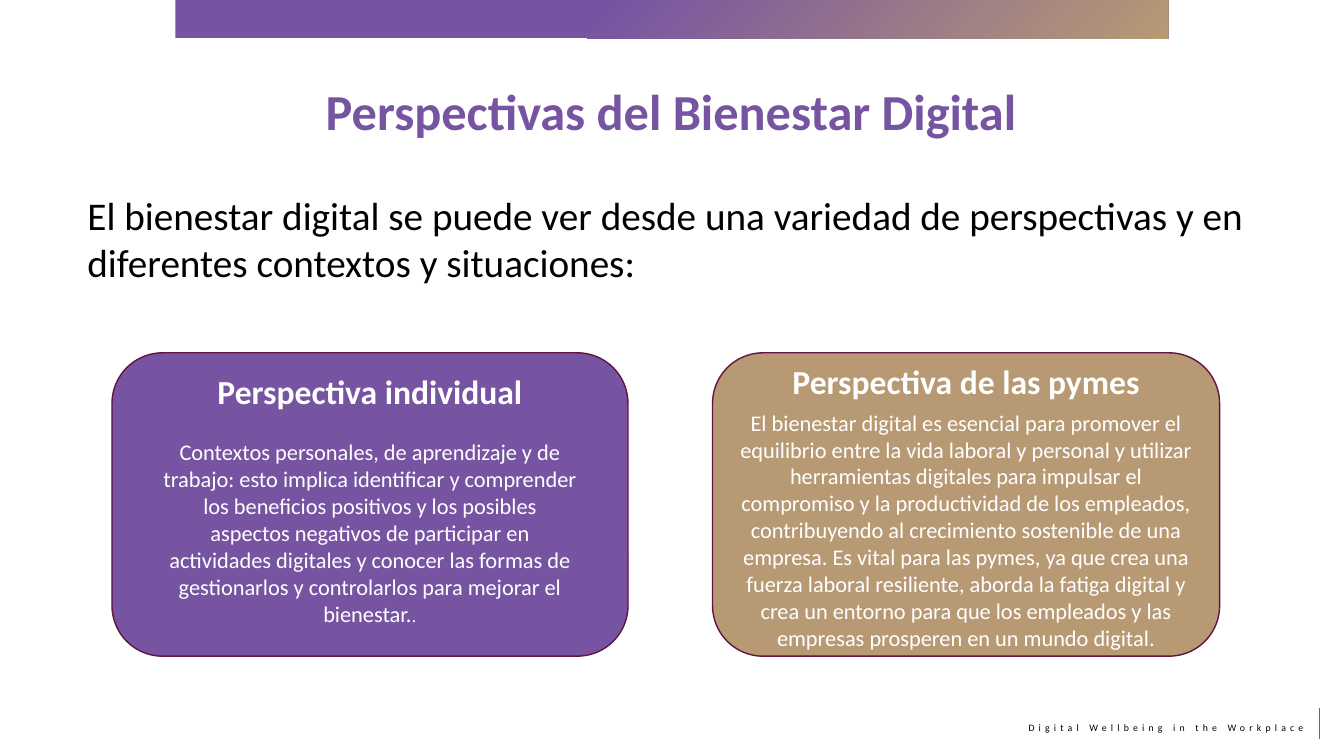
import pptx
import pptx.dml.color
import pptx.enum.shapes
import pptx.enum.text
import pptx.util
from dataclasses import dataclass
from lxml import etree
from pptx.oxml import parse_xml
from pptx.oxml.ns import nsdecls, qn

Pt = pptx.util.Pt
Align = pptx.enum.text.PP_ALIGN
Preset = pptx.enum.shapes.MSO_SHAPE


@dataclass(frozen=True)
class Theme:
    purple: str = "7654A2"
    tan: str = "B79974"
    outline: str = "631440"
    black: str = "000000"
    white: str = "FFFFFF"
    font: str = "Calibri"
    serif: str = "TeX Gyre Schola"
    title: float = 36
    intro: float = 28
    heading: float = 24
    body: float = 16
    stop: float = 12.8
    footer: float = 7


THEME = Theme()


def rgb(value):
    return pptx.dml.color.RGBColor.from_string(value)


def add_text_box(page, box):
    frame = page.shapes.add_textbox(*map(Pt, box)).text_frame
    frame.word_wrap = True
    return frame


def add_span(para, text, size, color, bold=False, font=THEME.font):
    span = para.add_run()
    span.text = text
    for name, value in {"size": Pt(size), "bold": bold, "name": font}.items():
        setattr(span.font, name, value)
    span.font.color.rgb = rgb(color)
    return span


def add_panel(page, preset, box):
    panel = page.shapes.add_shape(preset, *map(Pt, box))
    panel.shadow.inherit = False
    return panel


def add_band(page, box):
    """Top band, shaded radially from its lower right corner."""
    band = add_panel(page, Preset.RECTANGLE, box)
    band.line.fill.background()
    band.fill.background()
    properties = band.fill._xPr
    gradient = parse_xml(
        f'<a:gradFill {nsdecls("a")} rotWithShape="1"><a:gsLst>'
        f'<a:gs pos="0"><a:srgbClr val="{THEME.tan}"/></a:gs>'
        f'<a:gs pos="58000"><a:srgbClr val="{THEME.purple}"/></a:gs></a:gsLst>'
        '<a:path path="circle"><a:fillToRect l="100000" t="100000"/></a:path></a:gradFill>')
    properties.replace(properties.find(qn("a:noFill")), gradient)


def add_footer(page, box):
    left, top, width, height = box
    para = add_text_box(page, box).paragraphs[0]
    para.alignment = Align.RIGHT
    span = add_span(para, "Digital Wellbeing in the Workplace", THEME.footer, THEME.black)
    span.font._element.set("spc", "300")
    rule_x, rule_bottom = left + width + 4.3, top + height
    rule = page.shapes.add_connector(
        pptx.enum.shapes.MSO_CONNECTOR.STRAIGHT,
        *map(Pt, (rule_x, rule_bottom, rule_x, rule_bottom - 22.3)))
    rule.line.color.rgb = rgb(THEME.purple)
    rule.line.width = Pt(0.75)
    etree.SubElement(rule._element.spPr, qn("a:effectLst"))


def add_title(page, box):
    para = add_text_box(page, box).paragraphs[0]
    para.alignment = Align.CENTER
    add_span(para, "Perspectivas del Bienestar Digital", THEME.title, THEME.purple, True)


def add_intro(page, box):
    para = add_text_box(page, box).paragraphs[0]
    add_span(para, "El bienestar digital se puede ver desde una variedad de perspectivas "
             "y en diferentes contextos y situaciones:", THEME.intro, THEME.black)


def add_card(page, box, color, heading, body, offset, text_width, gap):
    """Rounded card with its text centred across it, offset from its top.

    Returns the body paragraph.
    """
    left, top, width, height = box
    card = add_panel(page, Preset.ROUNDED_RECTANGLE, box)
    card.fill.solid()
    card.fill.fore_color.rgb = rgb(color)
    card.line.color.rgb = rgb(THEME.outline)
    card.line.width = Pt(1)
    text_left = left + (width - text_width) / 2
    frame = add_text_box(page, (text_left, top + offset, text_width, height - offset))
    heading_para, body_para = frame.paragraphs[0], frame.add_paragraph()
    for para in (heading_para, body_para):
        para.alignment = Align.CENTER
    body_para.space_before = Pt(gap)
    add_span(heading_para, heading, THEME.heading, THEME.white, True)
    add_span(body_para, body, THEME.body, THEME.white)
    return body_para


def build_page(page):
    add_footer(page, (697, 511.9, 241.2, 15.8))
    add_band(page, (125.3, 0, 709.2, 27.4))
    add_title(page, (67, 53.5, 825, 63.4))
    add_intro(page, (55.4, 133.2, 849.6, 90.7))
    individual = add_card(
        page, (80, 252, 368.6, 216.7), THEME.purple, "Perspectiva individual",
        "Contextos personales, de aprendizaje y de trabajo: esto implica identificar y "
        "comprender los beneficios positivos y los posibles aspectos negativos de participar "
        "en actividades digitales y conocer las formas de gestionarlos y controlarlos para "
        "mejorar el bienestar.", 9.4, 312.5, 19.5)
    add_span(individual, ".", THEME.stop, THEME.white, font=THEME.serif)
    add_card(
        page, (509, 252, 362.2, 216.7), THEME.tan, "Perspectiva de las pymes",
        "El bienestar digital es esencial para promover el equilibrio entre la vida laboral y "
        "personal y utilizar herramientas digitales para impulsar el compromiso y la "
        "productividad de los empleados, contribuyendo al crecimiento sostenible de una "
        "empresa. Es vital para las pymes, ya que crea una fuerza laboral resiliente, aborda "
        "la fatiga digital y crea un entorno para que los empleados y las empresas prosperen "
        "en un mundo digital.", 2.2, 341, 5.5)


def main():
    deck = pptx.Presentation()
    deck.slide_width, deck.slide_height = Pt(960), Pt(540)
    build_page(deck.slides.add_slide(deck.slide_layouts[6]))
    deck.save("out.pptx")


if __name__ == "__main__":
    main()
